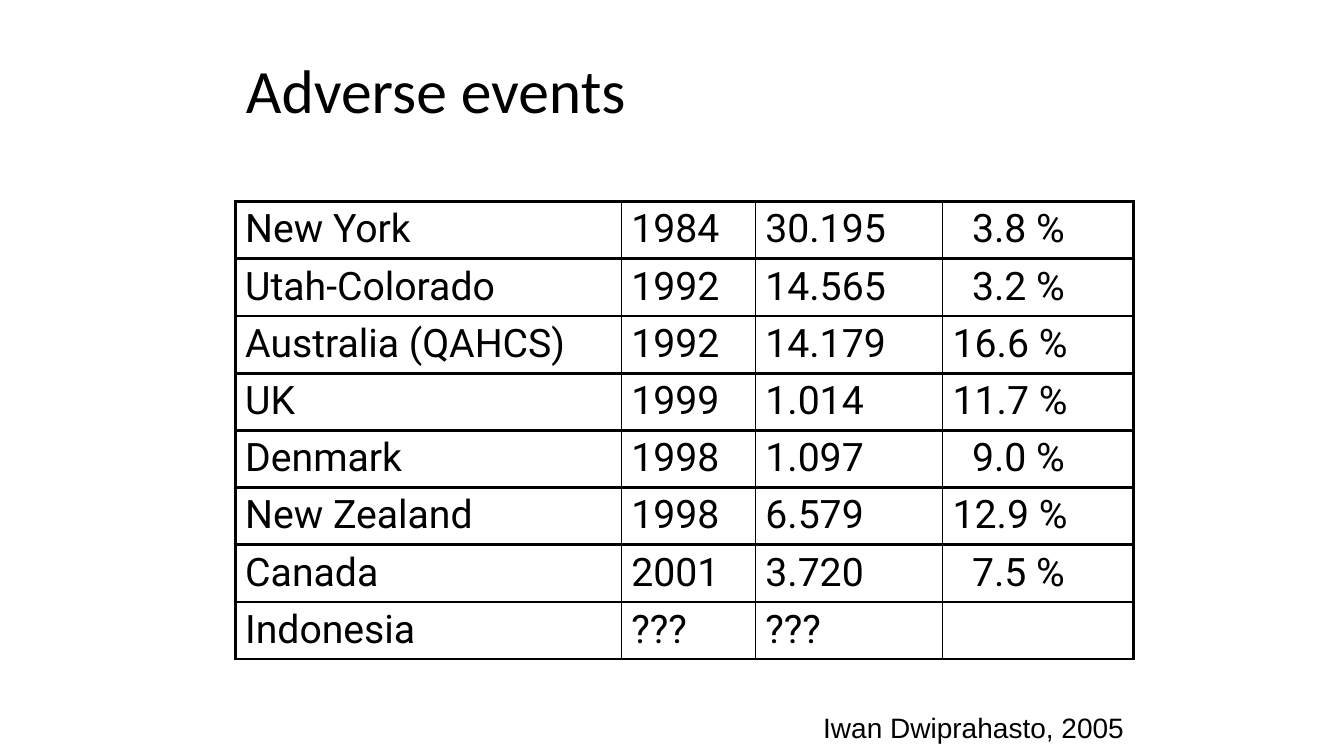
from dataclasses import dataclass

from pptx import Presentation
from pptx.dml.color import RGBColor
from pptx.enum import text
from pptx.oxml import parse_xml
from pptx.oxml.ns import nsdecls
from pptx.util import Cm, Pt


@dataclass(frozen=True)
class Theme:
    ink: str = "000000"
    title_font: str = "Calibri"
    title_size: int = 44
    table_font: str = "Roboto"
    table_size: int = 28
    credit_font: str = "Arial"
    credit_size: int = 20
    outer_line: float = 2.25
    inner_line: float = 1


THEME = Theme()

STUDIES = [
    ("New York", "1984", "30.195", "3.8 %"),
    ("Utah-Colorado", "1992", "14.565", "3.2 %"),
    ("Australia (QAHCS)", "1992", "14.179", "16.6 %"),
    ("UK", "1999", "1.014", "11.7 %"),
    ("Denmark", "1998", "1.097", "9.0 %"),
    ("New Zealand", "1998", "6.579", "12.9 %"),
    ("Canada", "2001", "3.720", "7.5 %"),
    ("Indonesia", "???", "???", ""),
]
COLUMN_WIDTHS = [9.73, 3.38, 4.72, 4.8]
ROW_HEIGHT = 1.44
CELL_MARGIN = 0.25
ONE_DIGIT_INDENT = 0.49


def style_runs(paragraph, font_name, size):
    for run in paragraph.runs:
        run.font.name = font_name
        run.font.size = Pt(size)
        run.font.color.rgb = RGBColor.from_string(THEME.ink)


def add_label(slide, wording, left, top, width, height, font_name, size):
    frame = slide.shapes.add_textbox(Cm(left), Cm(top), Cm(width), Cm(height)).text_frame
    frame.word_wrap = True
    frame.text = wording
    style_runs(frame.paragraphs[0], font_name, size)
    return frame


def set_borders(cell, widths):
    """Draw the cell's borders; widths maps L, R, T and B to points."""
    properties = cell._tc.get_or_add_tcPr()
    for side, width in widths.items():
        properties.append(parse_xml(
            f'<a:ln{side} {nsdecls("a")} w="{Pt(width)}"><a:solidFill>'
            f'<a:srgbClr val="{THEME.ink}"/></a:solidFill></a:ln{side}>'))


def fill_cell(cell, wording, is_first, is_last):
    outer, inner = THEME.outer_line, THEME.inner_line
    set_borders(cell, {"L": outer if is_first else inner,
                       "R": outer if is_last else inner,
                       "T": outer, "B": outer})
    cell.fill.background()
    one_digit = is_last and wording.find(".") == 1
    cell.margin_left = Cm(CELL_MARGIN + (ONE_DIGIT_INDENT if one_digit else 0))
    cell.margin_right = Cm(CELL_MARGIN)
    cell.text = wording
    style_runs(cell.text_frame.paragraphs[0], THEME.table_font, THEME.table_size)


def add_studies_table(slide, left, top):
    table = slide.shapes.add_table(
        len(STUDIES), len(COLUMN_WIDTHS), Cm(left), Cm(top),
        Cm(sum(COLUMN_WIDTHS)), Cm(ROW_HEIGHT * len(STUDIES))).table
    table.first_row = table.horz_banding = False
    for column, width in zip(table.columns, COLUMN_WIDTHS):
        column.width = Cm(width)
    last = len(COLUMN_WIDTHS) - 1
    for row, study in zip(table.rows, STUDIES):
        row.height = Cm(ROW_HEIGHT)
        for index, (cell, wording) in enumerate(zip(row.cells, study)):
            fill_cell(cell, wording, index == 0, index == last)


def main():
    deck = Presentation()
    deck.slide_width, deck.slide_height = Cm(33.87), Cm(19.05)
    slide = deck.slides.add_slide(deck.slide_layouts[6])

    title = add_label(slide, "Adverse events", 5.95, 0.76, 22.43, 3.18,
                      THEME.title_font, THEME.title_size)
    title.vertical_anchor = text.MSO_ANCHOR.MIDDLE
    title.paragraphs[0].line_spacing = 0.9

    add_studies_table(slide, 5.93, 5.08)

    credit = add_label(slide, "Iwan Dwiprahasto, 2005", 17.58, 17.78, 11, 1.09,
                       THEME.credit_font, THEME.credit_size)
    credit.paragraphs[0].alignment = text.PP_ALIGN.RIGHT

    deck.save("out.pptx")


if __name__ == "__main__":
    main()
